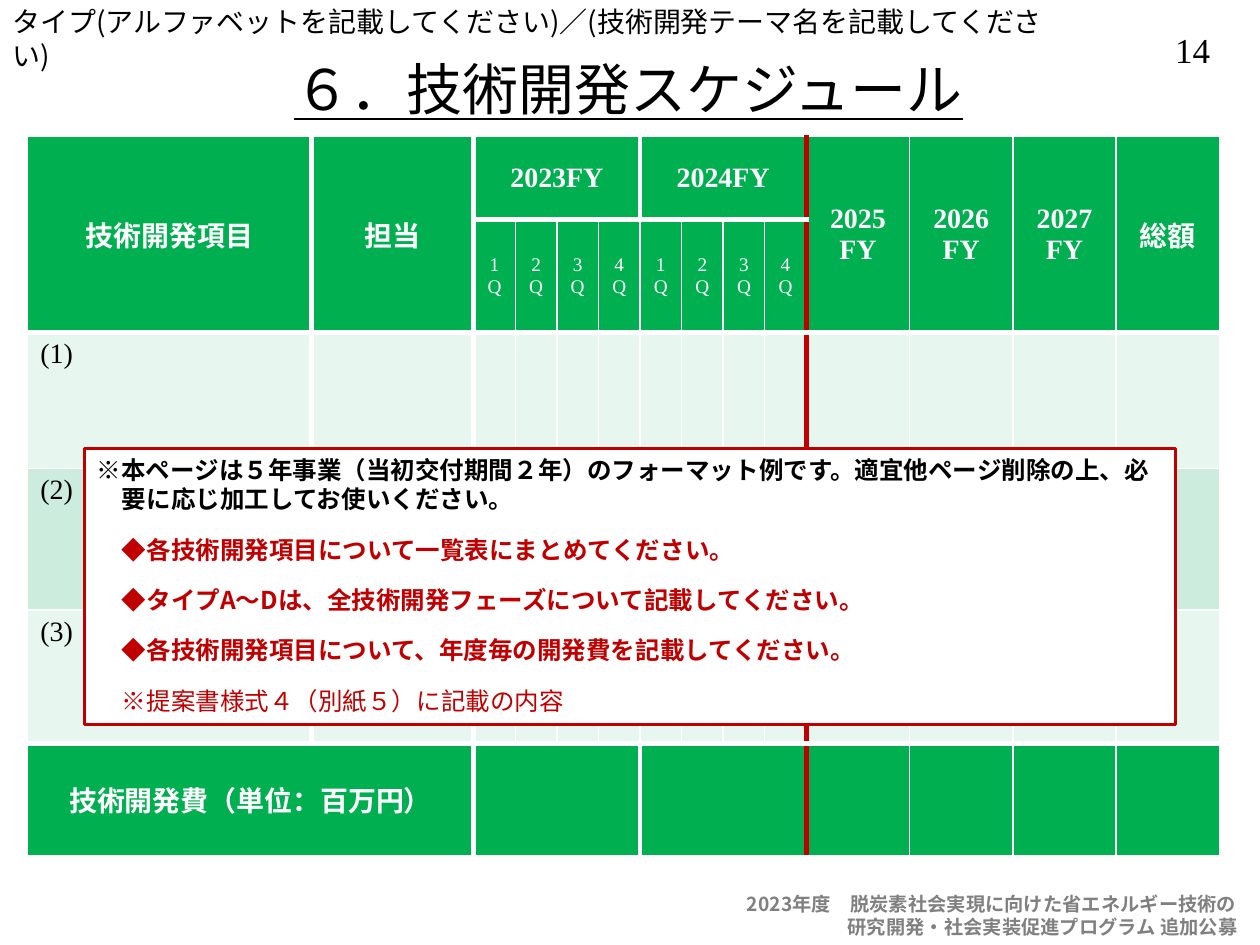
"""Build the technology development schedule slide."""
from dataclasses import dataclass

import pptx
import pptx.dml.color
import pptx.enum.shapes
import pptx.enum.text
import pptx.oxml
import pptx.oxml.ns
import pptx.util
from pptx.util import Inches

GOTHIC, SERIF = "Noto Sans CJK JP", "Times New Roman"
BLACK, WHITE, GREY = "000000", "FFFFFF", "808080"
GREEN, RED, PALE, MINT = "00B050", "C00000", "E7F6EF", "CCECDE"
LEFT, CENTER = pptx.enum.text.PP_ALIGN.LEFT, pptx.enum.text.PP_ALIGN.CENTER
TOP, MIDDLE = pptx.enum.text.MSO_ANCHOR.TOP, pptx.enum.text.MSO_ANCHOR.MIDDLE
COLUMNS = [2.25, 1.29] + [0.33] * 8 + [0.82] * 4
ROWS = [0.66, 0.9, 1.08, 1.12, 1.06, 0.89]
ROW_FILLS = [GREEN, GREEN, PALE, MINT, PALE, GREEN]
YEAR_ROWS = (0, 5)


@dataclass
class Line:
    text: str
    size: float
    color: str = BLACK
    bold: bool = False
    underline: bool = False
    font: str = GOTHIC
    align: int = LEFT
    before: float = 0
    margin: float = 0
    indent: float = 0


@dataclass
class Box:
    left: float
    top: float
    width: float
    height: float
    lines: list[Line]
    wrap: bool = True
    anchor: int = TOP


@dataclass
class Entry:
    row: int
    column: int
    texts: tuple[str, ...] = ()
    row_span: int = 1
    column_span: int = 1
    size: float = 16
    color: str = WHITE
    bold: bool = True
    align: int = CENTER
    anchor: int = MIDDLE


def rgb(value: str) -> pptx.dml.color.RGBColor:
    return pptx.dml.color.RGBColor.from_string(value)


def write(frame, lines: list[Line]) -> None:
    for number, line in enumerate(lines):
        paragraph = frame.add_paragraph() if number else frame.paragraphs[0]
        paragraph.text = line.text
        paragraph.alignment = line.align
        if line.before:
            paragraph.space_before = pptx.util.Pt(line.before)
        properties = paragraph._p.get_or_add_pPr()
        properties.set("marL", str(Inches(line.margin)))
        properties.set("indent", str(Inches(line.indent)))
        font = paragraph.font
        font.name, font.size = line.font, pptx.util.Pt(line.size)
        font.bold, font.underline = line.bold, line.underline
        font.color.rgb = rgb(line.color)
        latin = properties.find(".//" + pptx.oxml.ns.qn("a:latin"))
        latin.addnext(pptx.oxml.parse_xml(
            f'<a:ea {pptx.oxml.ns.nsdecls("a")} typeface="{GOTHIC}"/>'))


def fill_box(shape, box: Box) -> None:
    frame = shape.text_frame
    frame.word_wrap = box.wrap
    frame.vertical_anchor = box.anchor
    write(frame, box.lines)


def add_text(slide, box: Box) -> None:
    fill_box(slide.shapes.add_textbox(
        Inches(box.left), Inches(box.top), Inches(box.width), Inches(box.height)), box)


def add_notice(slide, box: Box) -> None:
    notice = slide.shapes.add_shape(
        pptx.enum.shapes.MSO_SHAPE.RECTANGLE,
        Inches(box.left), Inches(box.top), Inches(box.width), Inches(box.height))
    notice.shadow.inherit = False
    notice.fill.solid()
    notice.fill.fore_color.rgb = rgb(WHITE)
    notice.line.color.rgb = rgb(RED)
    notice.line.width = pptx.util.Pt(1.5)
    fill_box(notice, box)


def vertical_edge(row: int, boundary: int) -> tuple[str, int]:
    if boundary == 10:
        return RED, 3
    thick = boundary in (1, 2) or (boundary == 6 and row in YEAR_ROWS)
    return WHITE, 3 if thick else 1


def horizontal_edge(boundary: int) -> tuple[str, int]:
    return WHITE, 3 if boundary in (1, 2, 5) else 1


def set_borders(cell, row: int, column: int) -> None:
    edges = {
        "L": vertical_edge(row, column),
        "R": vertical_edge(row, column + 1),
        "T": horizontal_edge(row),
        "B": horizontal_edge(row + 1),
    }
    properties = cell._tc.get_or_add_tcPr()
    for place, (side, (color, width)) in enumerate(edges.items()):
        properties.insert(place, pptx.oxml.parse_xml(
            f'<a:ln{side} {pptx.oxml.ns.nsdecls("a")} w="{pptx.util.Pt(width)}">'
            f'<a:solidFill><a:srgbClr val="{color}"/></a:solidFill></a:ln{side}>'))


def add_schedule(slide, entries: list[Entry]) -> None:
    schedule = slide.shapes.add_table(
        len(ROWS), len(COLUMNS), Inches(0.22), Inches(1.08),
        Inches(sum(COLUMNS)), Inches(sum(ROWS))).table
    schedule.first_row = schedule.horz_banding = False
    for column, width in zip(schedule.columns, COLUMNS):
        column.width = Inches(width)
    for r, height in enumerate(ROWS):
        schedule.rows[r].height = Inches(height)
        for c in range(len(COLUMNS)):
            cell = schedule.cell(r, c)
            cell.fill.solid()
            cell.fill.fore_color.rgb = rgb(ROW_FILLS[r])
            set_borders(cell, r, c)
    for entry in entries:
        cell = schedule.cell(entry.row, entry.column)
        if entry.row_span * entry.column_span > 1:
            cell.merge(schedule.cell(entry.row + entry.row_span - 1,
                                     entry.column + entry.column_span - 1))
        cell.vertical_anchor = entry.anchor
        write(cell.text_frame, [
            Line(text, entry.size, entry.color, entry.bold, font=SERIF, align=entry.align)
            for text in entry.texts])


def main() -> None:
    deck = pptx.Presentation()
    deck.slide_width, deck.slide_height = Inches(10), Inches(7.5)
    slide = deck.slides.add_slide(deck.slide_layouts[6])

    add_text(slide, Box(9.14, 0.18, 0.65, 0.43,
                        [Line("14", 20, font=SERIF, align=CENTER)], wrap=False))
    add_text(slide, Box(0, -0.01, 8.4, 0.37, [
        Line("タイプ(アルファベットを記載してください)／(技術開発テーマ名を記載してください)", 16)]))
    add_text(slide, Box(5.83, 7.03, 4.17, 0.47, [
        Line("2023年度　脱炭素社会実現に向けた省エネルギー技術の", 11, GREY, True),
        Line("研究開発・社会実装促進プログラム 追加公募", 11, GREY, True, margin=0.8)]))
    add_text(slide, Box(0.74, 0.35, 8.5, 0.7, [
        Line("６．技術開発スケジュール", 32, underline=True, align=CENTER)], anchor=MIDDLE))

    entries = [Entry(0, 0, ("技術開発項目",), row_span=2), Entry(0, 1, ("担当",), row_span=2)]
    entries += [Entry(0, 2 + 4 * i, (f"{2023 + i}FY",), column_span=4) for i in range(2)]
    entries += [Entry(0, 10 + i, (str(2025 + i), "FY"), row_span=2) for i in range(3)]
    entries += [Entry(0, 13, ("総額",), row_span=2)]
    entries += [Entry(1, 2 + i, (f"{i % 4 + 1}Q",), size=11, bold=False) for i in range(8)]
    entries += [Entry(1 + i, 0, (f"({i})",), color=BLACK, bold=False, align=LEFT, anchor=TOP)
                for i in range(1, 4)]
    entries += [Entry(5, 0, ("技術開発費（単位：百万円）",), column_span=2)]
    entries += [Entry(5, 2 + 4 * i, column_span=4) for i in range(2)]
    add_schedule(slide, entries)

    requests = [
        ("◆各技術開発項目について一覧表にまとめてください。", True),
        ("◆タイプA～Dは、全技術開発フェーズについて記載してください。", True),
        ("◆各技術開発項目について、年度毎の開発費を記載してください。", True),
        ("※提案書様式４（別紙５）に記載の内容", False),
    ]
    opening = Line("※本ページは５年事業（当初交付期間２年）のフォーマット例です。"
                   "適宜他ページ削除の上、必要に応じ加工してお使いください。",
                   14, bold=True, margin=0.2, indent=-0.2)
    add_notice(slide, Box(0.67, 3.56, 8.66, 2.19, [opening] + [
        Line(text, 14, RED, bold, before=12, margin=0.2) for text, bold in requests]))
    deck.save("out.pptx")


if __name__ == "__main__":
    main()
